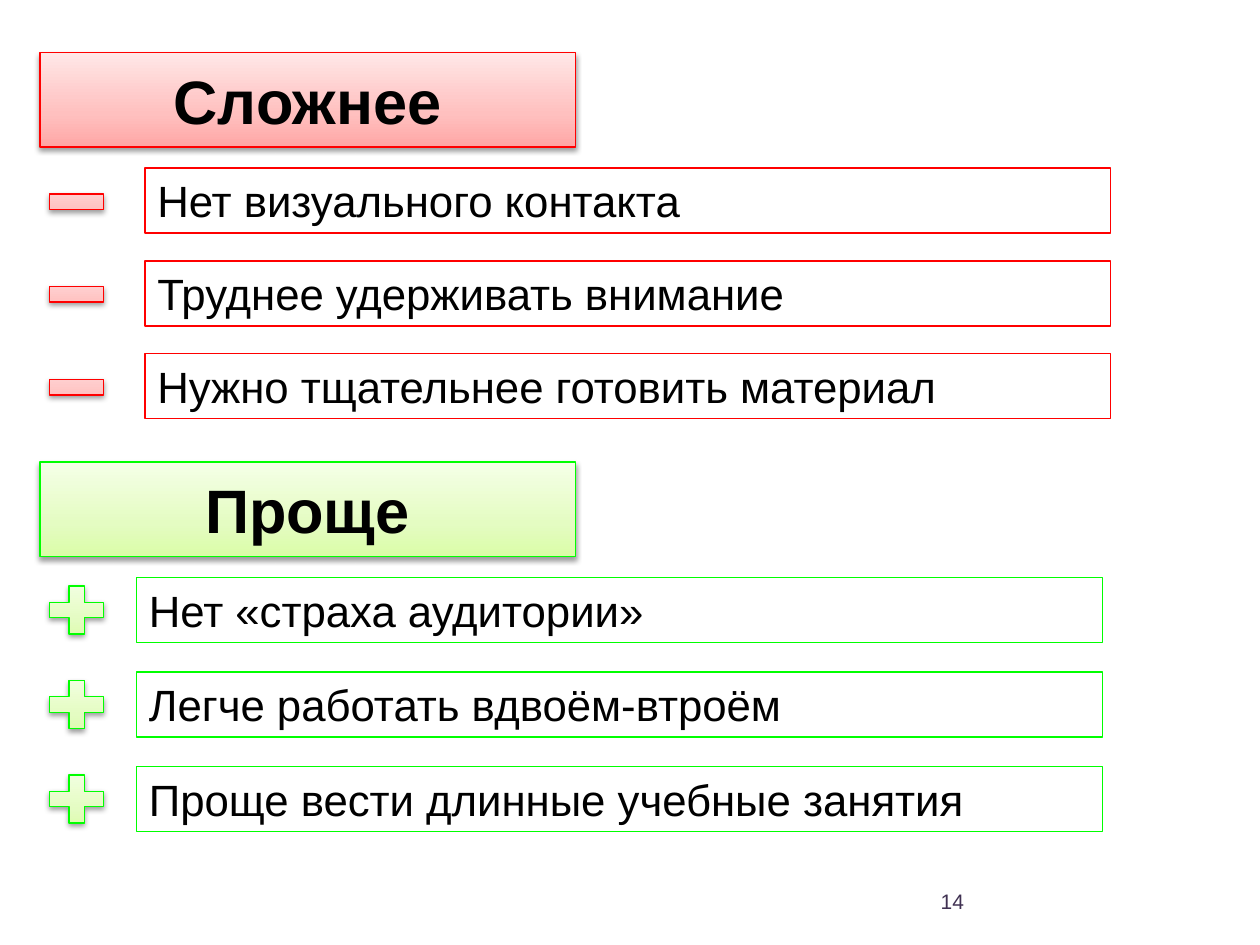
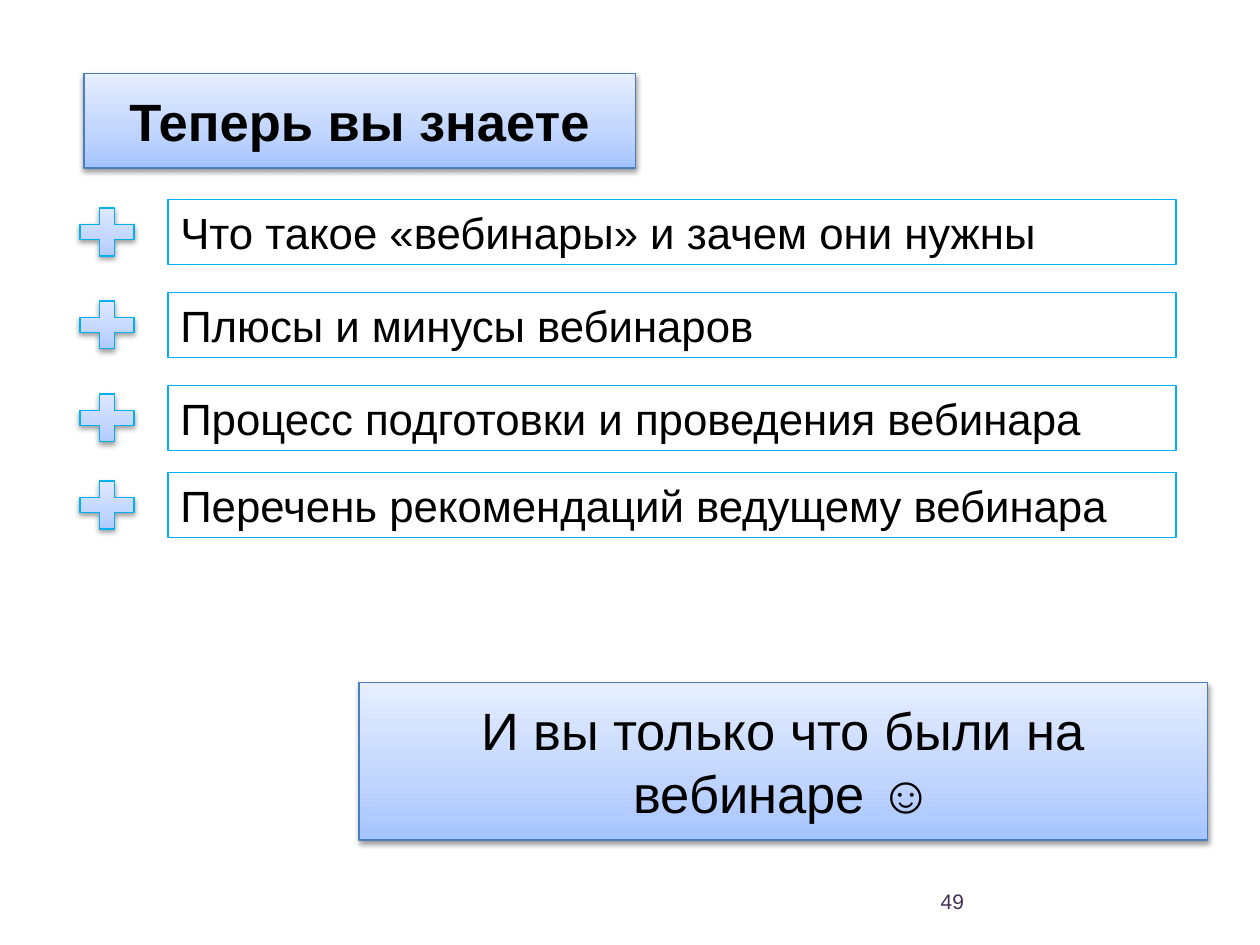
from dataclasses import dataclass

import lxml.etree
import pptx
import pptx.dml.color
import pptx.enum.shapes
import pptx.enum.text
import pptx.oxml.ns
import pptx.util

SHAPES = pptx.enum.shapes.MSO_SHAPE
ALIGN = pptx.enum.text.PP_ALIGN
ANCHOR = pptx.enum.text.MSO_ANCHOR
qn = pptx.oxml.ns.qn

COLOURS = {
    "text": "000000",
    "number": "403152",
    "shadow": "000000",
    "red": "FF0000",
    "green": "00FF00",
    "cyan": "00B0F0",
    "blue": "4B7EBC",
}
# Gradients run from bottom to top, with stops at these percentages.
STOPS = (0, 35, 100)
GRADIENTS = {
    "red": ("FFA6A5", "FFC0BF", "FFE7E7"),
    "green": ("DAFDA7", "E4FCC2", "F5FFE7"),
    "blue": ("A4C4FF", "BFD4FF", "E6EEFF"),
}
FONT = "Arial"
COLUMNS, ROWS = 120, 90
SLIDE_WIDTH, SLIDE_HEIGHT = pptx.util.Inches(10), pptx.util.Inches(7.5)


@dataclass(frozen=True)
class Area:
    """A rectangle in grid columns and rows."""
    column: float
    row: float
    columns: float
    rows: float

    def lengths(self) -> dict:
        across, down = SLIDE_WIDTH / COLUMNS, SLIDE_HEIGHT / ROWS
        return {
            "left": round(self.column * across),
            "top": round(self.row * down),
            "width": round(self.columns * across),
            "height": round(self.rows * down),
        }


@dataclass(frozen=True)
class Band:
    text: str
    area: Area
    gradient: str
    line: str
    size: int
    bold: bool = True


@dataclass(frozen=True)
class Points:
    """Statements in outlined boxes, each with a sign to its left."""
    texts: tuple
    rows: tuple
    box_column: float
    box_columns: float
    sign_column: float
    sign: SHAPES
    gradient: str
    line: str
    sign_drop: float = 0


NUMBER_AREA = Area(65, 83.4, 28, 4.8)
BOX_ROWS = 6.2
SIGN_COLUMNS = 7

HARDER = Band("Сложнее", Area(3.8, 5, 51, 9), "red", "red", 35)
EASIER = Band("Проще", Area(3.8, 44, 51, 9), "green", "green", 35)
LEARNED = Band("Теперь вы знаете", Area(8, 7, 52.5, 9), "blue", "blue", 30)
FAREWELL = Band("И вы только что были на вебинаре ☺", Area(34.2, 65, 80.8, 15),
                "blue", "blue", 30, bold=False)

DRAWBACKS = Points(
    ("Нет визуального контакта",
     "Труднее удерживать внимание",
     "Нужно тщательнее готовить материал"),
    tuple(16 + 8.85 * step for step in range(3)),
    13.8, 92, 3.8, SHAPES.MATH_MINUS, "red", "red", sign_drop=0.1)
BENEFITS = Points(
    ("Нет «страха аудитории»",
     "Легче работать вдвоём-втроём",
     "Проще вести длинные учебные занятия"),
    tuple(55 + 9 * step for step in range(3)),
    13, 92, 3.8, SHAPES.MATH_PLUS, "green", "green")
TOPICS = Points(
    ("Что такое «вебинары» и зачем они нужны",
     "Плюсы и минусы вебинаров",
     "Процесс подготовки и проведения вебинара",
     "Перечень рекомендаций ведущему вебинара"),
    (19, 27.85, 36.7, 45),
    16, 96, 6.7, SHAPES.MATH_PLUS, "blue", "cyan")


def set_values(target, values: dict) -> None:
    for name, value in values.items():
        setattr(target, name, value)


def rgb(name: str) -> pptx.dml.color.RGBColor:
    return pptx.dml.color.RGBColor.from_string(COLOURS[name])


def outline(shape, colour: str) -> None:
    shape.line.color.rgb = rgb(colour)
    shape.line.width = pptx.util.Pt(0.75)


def add_colour(parent, value: str):
    return lxml.etree.SubElement(parent, qn("a:srgbClr"), val=value)


def raise_panel(shape, gradient: str, line: str) -> None:
    """Give a shape the three-stop gradient, thin outline and soft shadow."""
    shape.fill.gradient()
    shape.fill.gradient_angle = 90
    stop_list = next(shape._element.spPr.iter(qn("a:gsLst")))
    for stop in list(stop_list):
        stop_list.remove(stop)
    for percent, value in zip(STOPS, GRADIENTS[gradient]):
        add_colour(lxml.etree.SubElement(stop_list, qn("a:gs"), pos=str(percent * 1000)), value)
    outline(shape, line)
    shape.shadow.inherit = False
    effects = shape._element.spPr.find(qn("a:effectLst"))
    shadow = lxml.etree.SubElement(effects, qn("a:outerShdw"), blurRad="40000",
                                   dist="20000", dir="5400000", rotWithShape="0")
    lxml.etree.SubElement(add_colour(shadow, COLOURS["shadow"]), qn("a:alpha"), val="38000")


def write(shape, text: str, size: int, align=ALIGN.LEFT, anchor=ANCHOR.MIDDLE,
          colour: str = "text", bold: bool = False) -> None:
    frame = shape.text_frame
    frame.text = text
    set_values(frame, {
        "word_wrap": True,
        "auto_size": pptx.enum.text.MSO_AUTO_SIZE.NONE,
        "vertical_anchor": anchor,
    })
    paragraph = frame.paragraphs[0]
    paragraph.alignment = align
    font = paragraph.runs[0].font
    set_values(font, {"name": FONT, "size": pptx.util.Pt(size), "bold": bold})
    font.color.rgb = rgb(colour)


def add_panel(slide, kind: SHAPES, area: Area, gradient: str, line: str):
    panel = slide.shapes.add_shape(kind, *area.lengths().values())
    raise_panel(panel, gradient, line)
    return panel


def write_band(panel, band: Band) -> None:
    write(panel, band.text, band.size, ALIGN.CENTER, bold=band.bold)


def add_band(slide, band: Band) -> None:
    write_band(add_panel(slide, SHAPES.RECTANGLE, band.area, band.gradient, band.line), band)


def add_points(slide, points: Points) -> None:
    for text, row in zip(points.texts, points.rows):
        box = Area(points.box_column, row, points.box_columns, BOX_ROWS)
        statement = slide.shapes.add_textbox(*box.lengths().values())
        outline(statement, points.line)
        write(statement, text, 25, anchor=ANCHOR.TOP)
        sign = Area(points.sign_column, row + points.sign_drop, SIGN_COLUMNS, BOX_ROWS)
        add_panel(slide, points.sign, sign, points.gradient, points.line)


def add_titled_slide(deck, heading: Band, number: int):
    slide = deck.slides.add_slide(deck.slide_layouts.get_by_name("Title Only"))
    title = slide.shapes.title
    set_values(title, heading.area.lengths())
    raise_panel(title, heading.gradient, heading.line)
    write_band(title, heading)
    page_number = slide.shapes.add_textbox(*NUMBER_AREA.lengths().values())
    write(page_number, str(number), 12, ALIGN.RIGHT, colour="number")
    return slide


def main() -> None:
    deck = pptx.Presentation()
    set_values(deck, {"slide_width": SLIDE_WIDTH, "slide_height": SLIDE_HEIGHT})

    comparison = add_titled_slide(deck, HARDER, 14)
    add_points(comparison, DRAWBACKS)
    add_band(comparison, EASIER)
    add_points(comparison, BENEFITS)

    summary = add_titled_slide(deck, LEARNED, 49)
    add_points(summary, TOPICS)
    add_band(summary, FAREWELL)

    deck.save("out.pptx")


if __name__ == "__main__":
    main()
